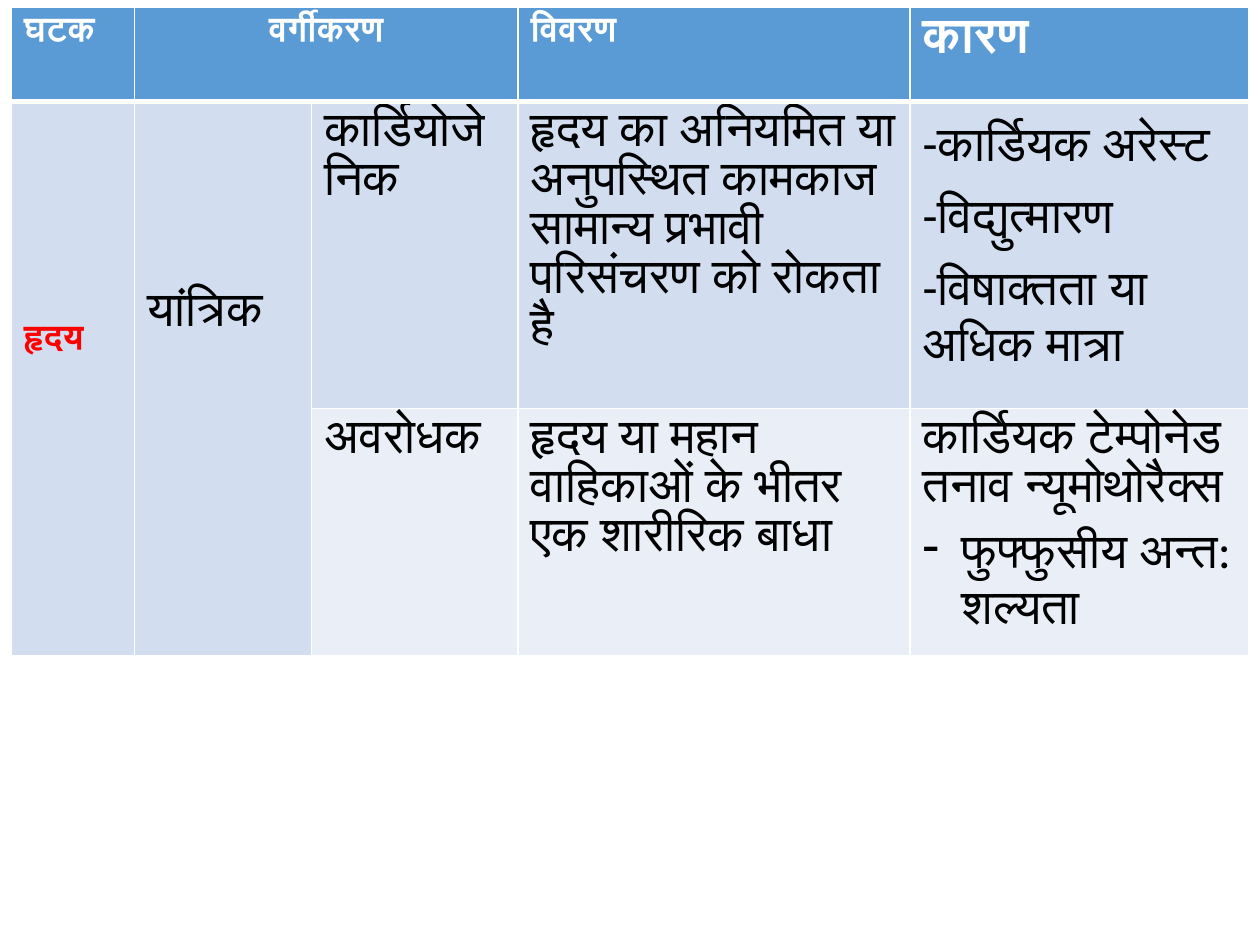
"""Build a slide with a table classifying cardiac causes, in Hindi."""
from pptx import Presentation
from pptx.dml.color import RGBColor
from pptx.enum.text import PP_ALIGN
from pptx.oxml import parse_xml
from pptx.oxml.ns import nsdecls
from pptx.util import Pt

WHITE = RGBColor(0xFF, 0xFF, 0xFF)
BLACK = RGBColor(0, 0, 0)
RED = RGBColor(0xFF, 0, 0)
BLUE = RGBColor(0x5B, 0x9B, 0xD5)
PALE_BLUE = RGBColor(0xD2, 0xDE, 0xEF)
PALER_BLUE = RGBColor(0xEA, 0xEF, 0xF7)

COLUMN_WIDTHS = [70.5, 101, 118, 224, 193.5]
ROW_HEIGHTS = [54, 175.5, 141.5]
ROW_FILLS = [BLUE, PALE_BLUE, PALER_BLUE]
CONTENT = [
    ["घटक", "वर्गीकरण", "", "विवरण", "कारण"],
    ["हृदय", "यांत्रिक", "कार्डियोजेनिक",
     "हृदय का अनियमित या अनुपस्थित कामकाज सामान्य प्रभावी परिसंचरण को रोकता है",
     "-कार्डियक अरेस्ट\n-विद्युत्मारण\n-विषाक्तता या अधिक मात्रा"],
    ["", "", "अवरोधक", "हृदय या महान वाहिकाओं के भीतर एक शारीरिक बाधा",
     "कार्डियक टेम्पोनेड\nतनाव न्यूमोथोरैक्स\nफुफ्फुसीय अन्त: शल्यता"],
]


def add_borders(cell, top, bottom):
    properties = cell._tc.get_or_add_tcPr()
    sides = [("lnL", 1), ("lnR", 1), ("lnT", top), ("lnB", bottom)]
    for position, (side, width) in enumerate(sides):
        properties.insert(position, parse_xml(
            f'<a:{side} {nsdecls("a")} w="{Pt(width)}"><a:solidFill>'
            f'<a:srgbClr val="{WHITE}"/></a:solidFill></a:{side}>'))


presentation = Presentation()
presentation.slide_width = Pt(720)
presentation.slide_height = Pt(540)
slide = presentation.slides.add_slide(presentation.slide_layouts[6])
causes = slide.shapes.add_table(
    3, 5, Pt(6.5), Pt(4), Pt(sum(COLUMN_WIDTHS)), Pt(sum(ROW_HEIGHTS))).table
for column, width in zip(causes.columns, COLUMN_WIDTHS):
    column.width = Pt(width)
for row, height in zip(causes.rows, ROW_HEIGHTS):
    row.height = Pt(height)

causes.cell(0, 1).merge(causes.cell(0, 2))
causes.cell(1, 0).merge(causes.cell(2, 0))
causes.cell(1, 1).merge(causes.cell(2, 1))

for r, texts in enumerate(CONTENT):
    for c, text in enumerate(texts):
        cell = causes.cell(r, c)
        cell.fill.solid()
        cell.fill.fore_color.rgb = ROW_FILLS[r]
        add_borders(cell, 3 if r == 1 else 1, 3 if r == 0 else 1)
        if cell.is_spanned:
            continue
        cell.text_frame.text = text
        small = c == 0 or (r == 0 and c < 4)
        for paragraph in cell.text_frame.paragraphs:
            for run in paragraph.runs:
                run.font.name = "Calibri"
                run.font.size = Pt(20 if small else 28)
                run.font.bold = r == 0 or c == 0
                run.font.color.rgb = WHITE if r == 0 else RED if c == 0 else BLACK

causes.cell(0, 1).text_frame.paragraphs[0].alignment = PP_ALIGN.CENTER
causes.cell(1, 0).margin_top = Pt(125.5)
causes.cell(1, 1).margin_top = Pt(106.5)

cardiogenic_causes = causes.cell(1, 4)
cardiogenic_causes.margin_top = Pt(5.5)
for number, paragraph in enumerate(cardiogenic_causes.text_frame.paragraphs):
    paragraph.line_spacing = 1.07
    paragraph.space_before = Pt(4.5 if number else 0)

embolism = causes.cell(2, 4).text_frame.paragraphs[2]
embolism.line_spacing = 1.07
embolism.space_before = Pt(3)
embolism_properties = embolism._p.get_or_add_pPr()
embolism_properties.set("marL", str(Pt(22.5)))
embolism_properties.set("indent", str(Pt(-22.5)))
embolism_properties.append(parse_xml(f'<a:buChar {nsdecls("a")} char="-"/>'))

presentation.save("out.pptx")
